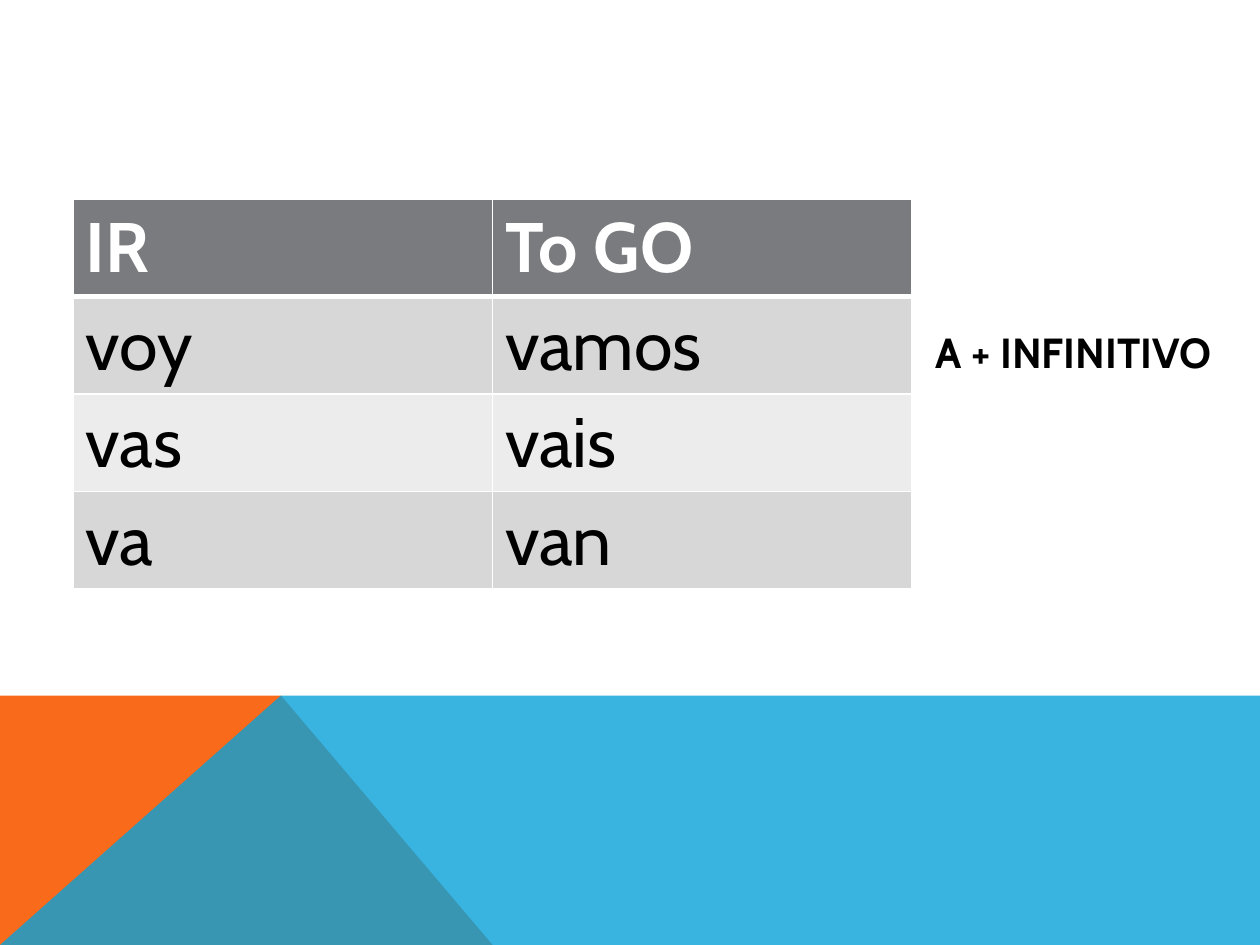
"""Build a slide with the conjugation of IR above a two-colour footer."""
from dataclasses import dataclass

from lxml.etree import SubElement
from pptx import Presentation
from pptx.dml.color import RGBColor
from pptx.enum.text import MSO_ANCHOR
from pptx.oxml.ns import qn
from pptx.slide import Slide
from pptx.table import _Cell
from pptx.text.text import _Paragraph
from pptx.util import Inches, Pt

WHITE = RGBColor(0xFF, 0xFF, 0xFF)
BLACK = RGBColor(0x00, 0x00, 0x00)
ORANGE = RGBColor(0xF9, 0x6A, 0x1B)
BLUE = RGBColor(0x08, 0xA1, 0xD9)
HEADER_GREY = RGBColor(0x79, 0x7B, 0x7E)
BAND_GREYS = (RGBColor(0xEC, 0xEC, 0xEC), RGBColor(0xD7, 0xD7, 0xD8))

FONT = "Cabin"
PAGE_WIDTH, PAGE_HEIGHT = 10, 7.5
FOOTER_TOP, PEAK, ORANGE_END = 5.52, 2.23, 3.91
TABLE_LEFT, TABLE_TOP = 0.58, 1.58
COLUMN_WIDTH, ROW_HEIGHT = 3.33, 0.77
THIN, THICK = 1, 3

CONJUGATION = (
    ("IR", "To GO"),
    ("voy", "vamos"),
    ("vas", "vais"),
    ("va", "van"),
)


@dataclass(frozen=True)
class Panel:
    """A filled footer polygon with corners in inches."""

    corners: tuple[tuple[float, float], ...]
    colour: RGBColor
    opacity: int = 100


PANELS = (
    Panel(((0, PAGE_HEIGHT), (0, FOOTER_TOP), (PEAK, FOOTER_TOP),
           (ORANGE_END, PAGE_HEIGHT)), ORANGE),
    Panel(((0, PAGE_HEIGHT), (PEAK, FOOTER_TOP), (PAGE_WIDTH, FOOTER_TOP),
           (PAGE_WIDTH, PAGE_HEIGHT)), BLUE, 80),
)


def draw_panel(page: Slide, panel: Panel) -> None:
    """Draw one footer polygon."""
    start, *others = [(Inches(x), Inches(y)) for x, y in panel.corners]
    builder = page.shapes.build_freeform(*start)
    builder.add_line_segments(others, close=True)
    shape = builder.convert_to_shape()
    shape.shadow.inherit = False
    shape.line.fill.background()
    shape.fill.solid()
    shape.fill.fore_color.rgb = panel.colour
    if panel.opacity < 100:
        colour = shape.fill._xPr.find(f".//{qn('a:srgbClr')}")
        SubElement(colour, qn("a:alpha"), val=str(panel.opacity * 1000))


def write(paragraph: _Paragraph, text: str, size: int, colour: RGBColor,
          bold: bool) -> None:
    """Add a formatted span to a paragraph."""
    span = paragraph.add_run()
    span.text = text
    for name, value in {"name": FONT, "size": Pt(size), "bold": bold}.items():
        setattr(span.font, name, value)
    span.font.color.rgb = colour


def add_borders(cell: _Cell, widths: dict[str, int]) -> None:
    """Give a cell white borders of the given point widths."""
    properties = cell._tc.get_or_add_tcPr()
    for side, width in widths.items():
        line = SubElement(properties, qn(f"a:ln{side}"), w=str(Pt(width)))
        fill = SubElement(line, qn("a:solidFill"))
        SubElement(fill, qn("a:srgbClr"), val=str(WHITE))


def draw_table(page: Slide) -> None:
    """Draw the banded conjugation table."""
    row_count, column_count = len(CONJUGATION), len(CONJUGATION[0])
    table = page.shapes.add_table(
        row_count, column_count, Inches(TABLE_LEFT), Inches(TABLE_TOP),
        Inches(COLUMN_WIDTH * column_count), Inches(ROW_HEIGHT * row_count),
    ).table
    for row, words in enumerate(CONJUGATION):
        header = row == 0
        widths = {"L": THIN, "R": THIN, "T": THICK if row == 1 else THIN,
                  "B": THICK if header else THIN}
        for column, word in enumerate(words):
            cell = table.cell(row, column)
            add_borders(cell, widths)
            cell.fill.solid()
            cell.fill.fore_color.rgb = HEADER_GREY if header else BAND_GREYS[row % 2]
            write(cell.text_frame.paragraphs[0], word, 40,
                  WHITE if header else BLACK, header)


def draw_note(page: Slide) -> None:
    """Write the grammar note beside the table."""
    box = page.shapes.add_textbox(Inches(7.33), Inches(2.54), Inches(2.5), Inches(0.5))
    for name, value in {"word_wrap": True, "vertical_anchor": MSO_ANCHOR.TOP}.items():
        setattr(box.text_frame, name, value)
    write(box.text_frame.paragraphs[0], "A + INFINITIVO", 24, BLACK, True)


def main() -> None:
    """Build and save the deck."""
    deck = Presentation()
    deck.slide_width, deck.slide_height = Inches(PAGE_WIDTH), Inches(PAGE_HEIGHT)
    page = deck.slides.add_slide(deck.slide_layouts.get_by_name("Blank"))
    for panel in PANELS:
        draw_panel(page, panel)
    draw_table(page)
    draw_note(page)
    deck.save("out.pptx")


if __name__ == "__main__":
    main()
